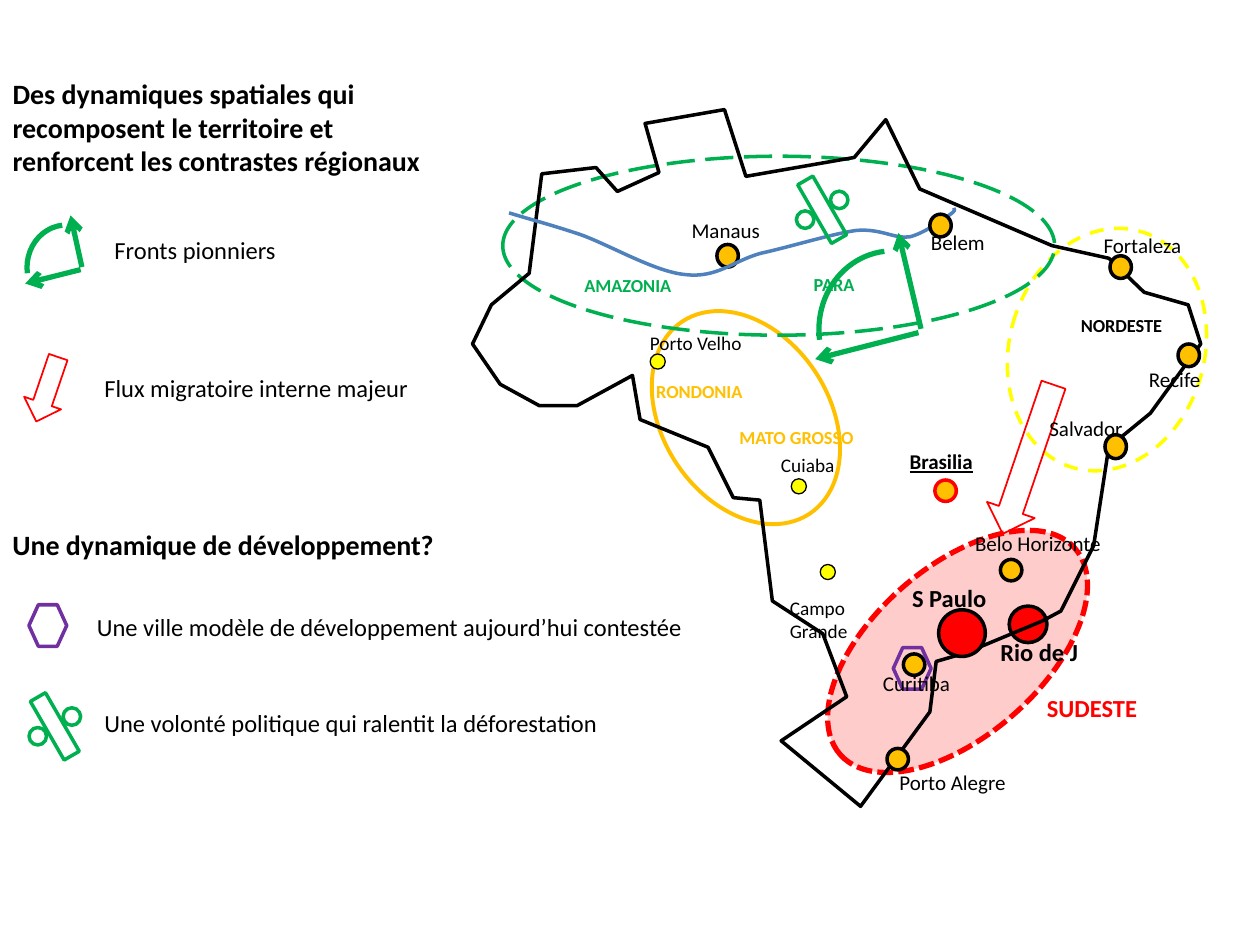
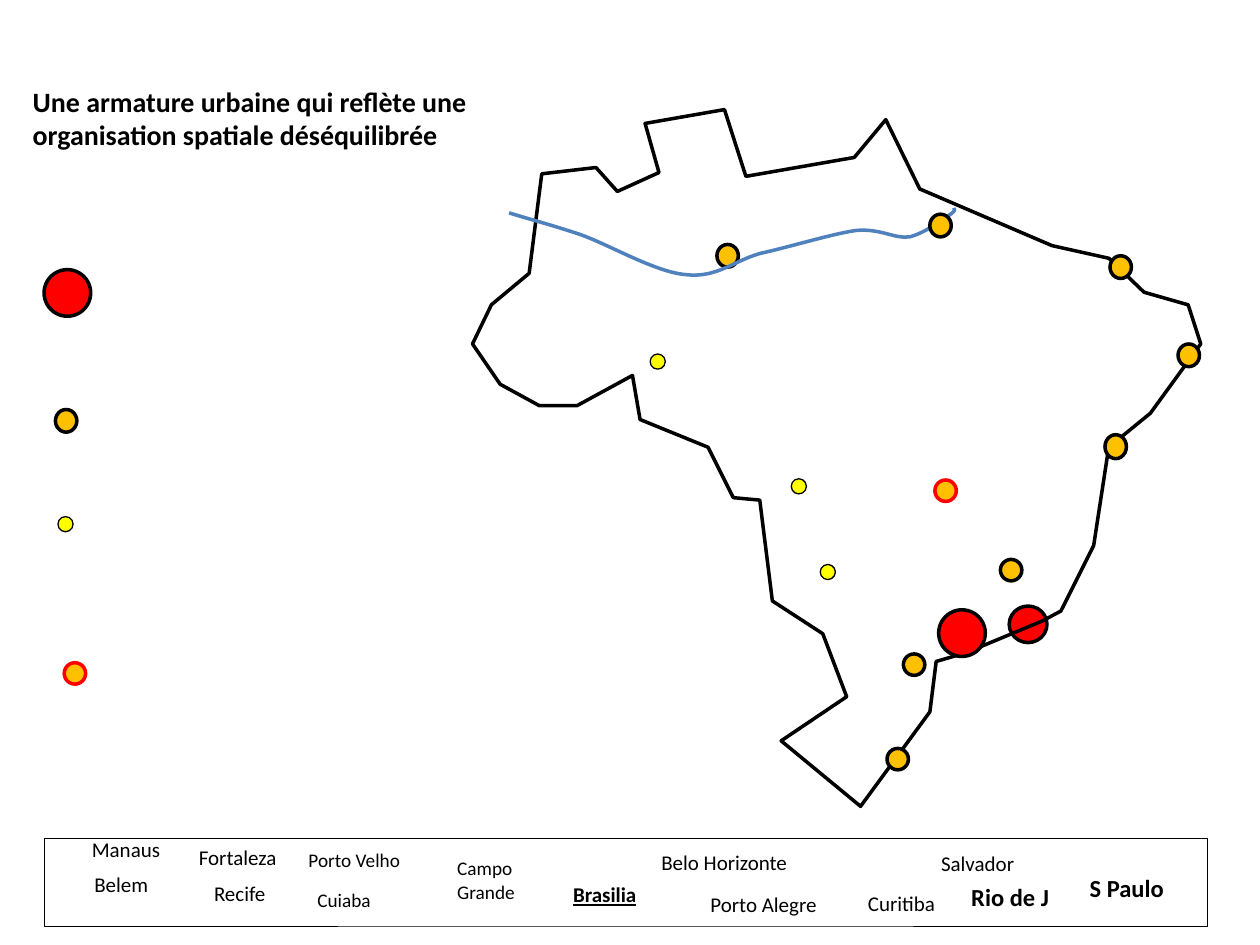
from typing import Any, NamedTuple, Optional

import lxml.etree
import pptx
import pptx.dml.color
import pptx.enum.dml
import pptx.enum.shapes
import pptx.enum.text
import pptx.oxml.ns
import pptx.util

RGB = pptx.dml.color.RGBColor
SHAPE = pptx.enum.shapes.MSO_SHAPE
DASH = pptx.enum.dml.MSO_LINE
qn = pptx.oxml.ns.qn

# One px is a hundredth of an inch
SCALE = 9144
FONT = "Calibri"
BLACK = RGB(0x00, 0x00, 0x00)
RED = RGB(0xFF, 0x00, 0x00)
AMBER = RGB(0xFF, 0xC0, 0x00)
YELLOW = RGB(0xFF, 0xFF, 0x00)
GREEN = RGB(0x00, 0xB0, 0x50)
BLUE = RGB(0x4F, 0x81, 0xBD)
PURPLE = RGB(0x70, 0x30, 0xA0)


class Box(NamedTuple):
    x: int
    y: int
    w: int
    h: int


class Form(NamedTuple):
    kind: Any
    box: Box
    line: RGB
    width: float = 2
    fill: Optional[RGB] = None
    turn: float = 0
    dash: Any = None
    alpha: int = 100


class Label(NamedTuple):
    text: str
    box: Box
    size: float = 14
    color: RGB = BLACK
    bold: bool = False
    under: bool = False


class Name(NamedTuple):
    text: str
    map: tuple[int, int]
    bank: tuple[int, int]
    w: int
    h: int = 30
    size: float = 12
    bold: bool = False
    under: bool = False


class Rank(NamedTuple):
    w: int
    h: int
    fill: RGB
    line: RGB = BLACK
    width: float = 2


# Ranks of towns
MAIN = Rank(37, 37, RED)
SECOND = Rank(30, 29, RED)
LARGE = Rank(17, 18, AMBER)
ROUND = Rank(17, 17, AMBER)
TALL = Rank(17, 19, AMBER)
SMALL = Rank(12, 12, YELLOW, BLACK, 0.75)
SEAT = Rank(17, 17, AMBER, RED)

# Towns under and over the river, with their corners
UNDER = [(MAIN, 745, 484), (ROUND, 704, 594), (ROUND, 717, 519), (ROUND, 794, 444),
         (TALL, 877, 345), (LARGE, 881, 203), (LARGE, 569, 194), (LARGE, 935, 273),
         (SEAT, 742, 381)]
OVER = [(SMALL, 516, 281), (SMALL, 628, 380), (SMALL, 651, 448), (LARGE, 738, 170)]
KEY = [(MAIN, 35, 214), (LARGE, 44, 325), (SMALL, 46, 410), (SEAT, 51, 526)]

BORDER = [(420, 217), (430, 138), (473, 133), (490, 152), (523, 137), (512, 98), (575, 87),
          (592, 140), (678, 125), (703, 95), (730, 150), (835, 195), (880, 205), (908, 232),
          (943, 242), (953, 273), (913, 328), (880, 355), (868, 433), (842, 485), (827, 493),
          (767, 518), (743, 525), (738, 565), (683, 640), (620, 588), (672, 553), (653, 503),
          (613, 477), (603, 397), (582, 395), (562, 355), (508, 333), (502, 298), (458, 322),
          (428, 322), (397, 305), (375, 273), (390, 242)]
# Start, then two handles and an end for each bend
RIVER = [(404, 169), (420, 174), (436, 178), (460, 186), (483, 194), (520, 216), (544, 218),
         (569, 221), (582, 207), (604, 201), (627, 196), (659, 186), (679, 183), (699, 181),
         (710, 190), (722, 188), (734, 185), (747, 175), (753, 171), (759, 167), (758, 166),
         (757, 165)]

NAMES = [
    Name("Rio de J", (784, 501), (761, 695), 82, 34, 14, True),
    Name("S Paulo", (714, 458), (855, 688), 80, 34, 14, True),
    Name("Brasilia", (712, 351), (445, 695), 71, bold=True, under=True),
    Name("Cuiaba", (610, 355), (242, 700), 63, 29, 11),
    Name("Campo\nGrande", (617, 468), (353, 675), 68, 47, 11),
    Name("Porto Alegre", (704, 606), (554, 703), 106),
    Name("Belo Horizonte", (764, 416), (515, 669), 121),
    Name("Salvador", (823, 325), (737, 670), 79),
    Name("Recife", (902, 286), (160, 694), 62),
    Name("Fortaleza", (866, 180), (148, 665), 82),
    Name("Belem", (729, 177), (65, 687), 63),
    Name("Manaus", (539, 168), (63, 659), 75),
    Name("Porto Velho", (506, 258), (235, 668), 94, 29, 11),
    Name("Curitiba", (691, 527), (679, 702), 74),
]

ZONES = [
    Form(SHAPE.OVAL, Box(636, 450, 248, 134), RED, 3, RED, 318.7, DASH.SQUARE_DOT, 20),
    Form(SHAPE.OVAL, Box(526, 240, 132, 183), AMBER, 2.25, turn=326.5),
    Form(SHAPE.OVAL, Box(801, 180, 155, 195), YELLOW, turn=15.4, dash=DASH.DASH),
    Form(SHAPE.OVAL, Box(399, 124, 438, 142), GREEN, dash=DASH.LONG_DASH),
]
REGIONS = [
    Label("MATO GROSSO", Box(577, 333, 116, 29), 10.5, AMBER, True),
    Label("RONDONIA", Box(511, 297, 90, 28), 10.5, AMBER, True),
    Label("PARA", Box(636, 212, 54, 28), 10.5, GREEN, True),
    Label("AMAZONIA", Box(454, 213, 90, 28), 10.5, GREEN, True),
    Label("NORDESTE", Box(848, 244, 86, 28), 10.5, BLACK, True),
    Label("SUDESTE", Box(821, 545, 93, 34), 14, RED, True),
]
LEGEND = [
    Label("Fronts pionniers", Box(81, 182, 149, 34)),
    Label("Flux migratoire interne majeur", Box(73, 291, 263, 34)),
    Label("Une ville modèle de développement aujourd’hui contestée", Box(67, 481, 489, 34)),
    Label("Une volonté politique qui ralentit la déforestation", Box(73, 557, 421, 34)),
]
# Each sign stands in the legend and on the map
SIGNS = [
    *(Form(SHAPE.DOWN_ARROW, box, RED, 1, turn=18.8)
      for box in (Box(22, 282, 31, 54), Box(796, 302, 40, 125))),
    *(Form(SHAPE.HEXAGON, Box(x, y, 30, 33), PURPLE) for x, y in ((23, 480), (709, 514))),
    *(Form(SHAPE.MATH_DIVIDE, Box(x, y, 73, 59), GREEN, turn=60)
      for x, y in ((7, 547), (616, 137))),
]
FRONTS = [Box(19, 181, 69, 64), Box(646, 203, 127, 119)]
# Front arrows as shares of the arc's box: from, to
RAYS = [((0.67, 0.49), (0.53, -0.15)), ((0.65, 0.51), (0.01, 0.69))]


def emu(*sizes: int) -> list[int]:
    return [size * SCALE for size in sizes]


def put(thing: Any, values: dict[str, Any]) -> None:
    for key, value in values.items():
        setattr(thing, key, value)


def stroke(line: Any, color: RGB, width: float) -> None:
    line.color.rgb = color
    line.width = pptx.util.Pt(width)


def draw(slide: Any, form: Form) -> None:
    shape = slide.shapes.add_shape(form.kind, *emu(*form.box))
    shape.shadow.inherit = False
    shape.rotation = form.turn
    stroke(shape.line, form.line, form.width)
    if form.dash:
        shape.line.dash_style = form.dash
    if form.fill is None:
        shape.fill.background()
        return
    shape.fill.solid()
    shape.fill.fore_color.rgb = form.fill
    if form.alpha < 100:
        tint = shape._element.spPr.find(qn("a:solidFill"))[0]
        lxml.etree.SubElement(tint, qn("a:alpha"), val=str(form.alpha * 1000))


def fill_text(shape: Any, label: Label, wrap: bool) -> None:
    frame = shape.text_frame
    frame.text = label.text
    put(frame, {"word_wrap": wrap,
                "auto_size": pptx.enum.text.MSO_AUTO_SIZE.SHAPE_TO_FIT_TEXT,
                "vertical_anchor": pptx.enum.text.MSO_ANCHOR.TOP})
    for para in frame.paragraphs:
        para.alignment = pptx.enum.text.PP_ALIGN.LEFT
        font = para.runs[0].font
        put(font, {"name": FONT, "size": pptx.util.Pt(label.size),
                   "bold": label.bold, "underline": label.under})
        font.color.rgb = label.color


def write(slide: Any, label: Label, wrap: bool = False) -> None:
    fill_text(slide.shapes.add_textbox(*emu(*label.box)), label, wrap)


def head(slide: Any, text: str, box: Box) -> None:
    title = slide.shapes.title
    put(title, dict(zip(("left", "top", "width", "height"), emu(*box))))
    fill_text(title, Label(text, box, 16, BLACK, True), True)


def dots(slide: Any, towns: list[tuple[Rank, int, int]]) -> None:
    for rank, x, y in towns:
        draw(slide, Form(SHAPE.OVAL, Box(x, y, rank.w, rank.h),
                         rank.line, rank.width, rank.fill))


def trace(slide: Any, points: list[tuple[int, int]], color: RGB, close: bool) -> Any:
    pen = slide.shapes.build_freeform(*points[0], scale=SCALE)
    pen.add_line_segments(points[1:], close=close)
    shape = pen.convert_to_shape()
    shape.shadow.inherit = False
    shape.fill.background()
    stroke(shape.line, color, 2)
    return shape


def bend(shape: Any) -> None:
    """Turn each three straight segments into one cubic curve."""
    steps = list(shape._element.iter(qn("a:lnTo")))
    for step in range(0, len(steps), 3):
        curve = lxml.etree.Element(qn("a:cubicBezTo"))
        steps[step].addprevious(curve)
        for part in steps[step:step + 3]:
            curve.append(part[0])
            part.getparent().remove(part)


def base(slide: Any) -> None:
    """Draw the map that both slides share."""
    dots(slide, [(SECOND, 801, 481)])
    trace(slide, BORDER, BLACK, True)
    dots(slide, UNDER)
    bend(trace(slide, RIVER, BLUE, False))
    dots(slide, OVER)


def front(slide: Any, box: Box) -> None:
    for ray in RAYS:
        ends = [round(n) for u, v in ray for n in (box.x + u * box.w, box.y + v * box.h)]
        arrow = slide.shapes.add_connector(
            pptx.enum.shapes.MSO_CONNECTOR.STRAIGHT, *emu(*ends))
        stroke(arrow.line, GREEN, 3)
        props = arrow._element.spPr
        lxml.etree.SubElement(props.find(qn("a:ln")), qn("a:tailEnd"), type="arrow")
        lxml.etree.SubElement(props, qn("a:effectLst"))
    draw(slide, Form(SHAPE.ARC, box, GREEN, 3, turn=263.1))


def names(slide: Any, place: str) -> None:
    for name in NAMES:
        box = Box(*getattr(name, place), name.w, name.h)
        write(slide, Label(name.text, box, name.size, BLACK, name.bold, name.under))


def trends(slide: Any) -> None:
    head(slide, "Des dynamiques spatiales qui recomposent le territoire et "
                "renforcent les contrastes régionaux", Box(0, 56, 351, 91))
    for zone in ZONES:
        draw(slide, zone)
    base(slide)
    for sign in SIGNS:
        draw(slide, sign)
    for box in FRONTS:
        front(slide, box)
    names(slide, "map")
    for label in REGIONS + LEGEND:
        write(slide, label)
    write(slide, Label("Une dynamique de développement?", Box(0, 414, 437, 37),
                       16, BLACK, True), True)


def cities(slide: Any) -> None:
    head(slide, "Une armature urbaine qui reflète une organisation spatiale "
                "déséquilibrée", Box(16, 62, 372, 64))
    base(slide)
    dots(slide, KEY)
    # Bank of names to place
    names(slide, "bank")
    draw(slide, Form(SHAPE.RECTANGLE, Box(35, 665, 923, 70), BLACK, 0.25))


def main() -> None:
    deck = pptx.Presentation()
    deck.slide_width, deck.slide_height = emu(1000, 750)
    for build in (trends, cities):
        build(deck.slides.add_slide(deck.slide_layouts[5]))
    deck.save("out.pptx")


if __name__ == "__main__":
    main()
